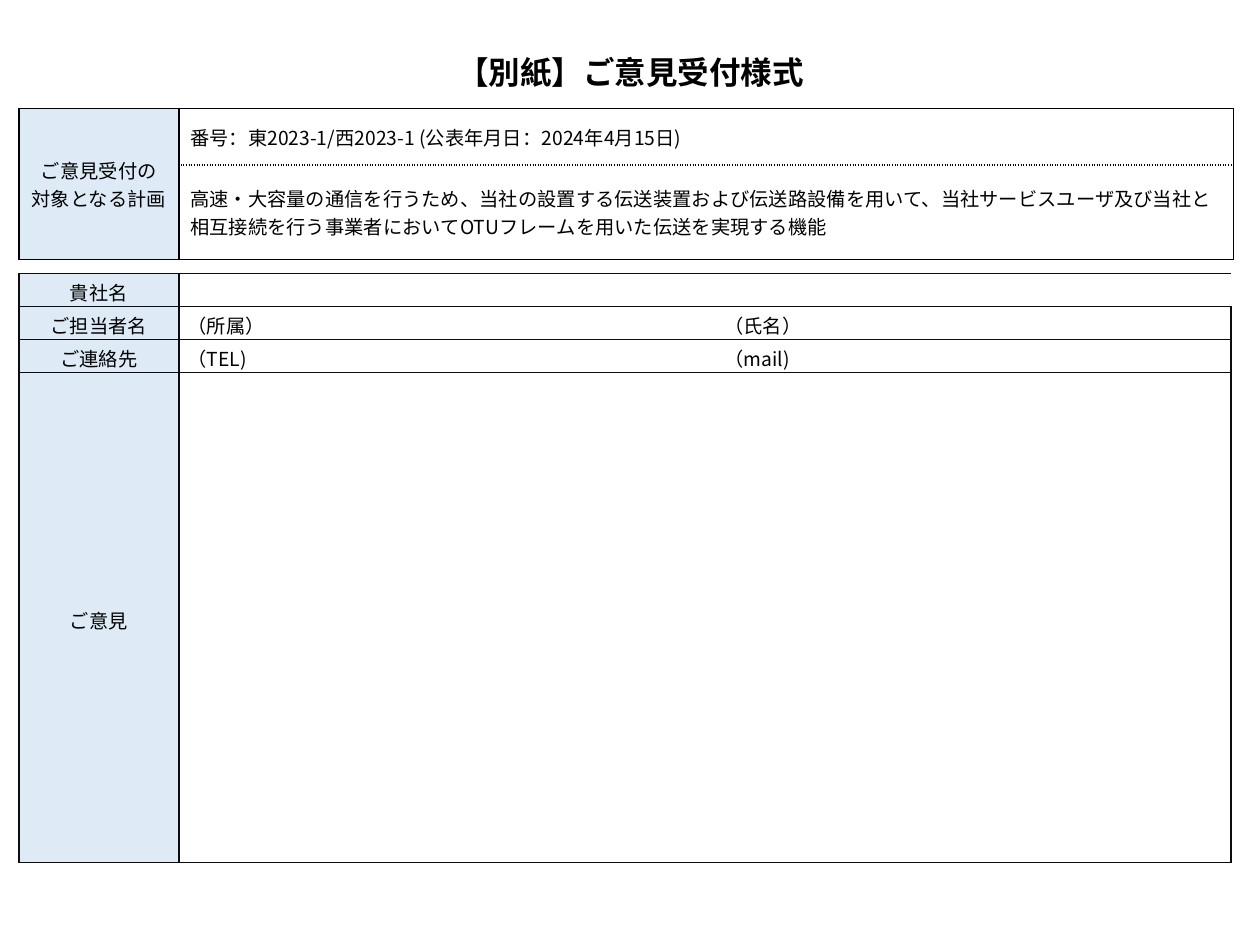
"""Build the opinion submission form slide."""
from lxml import etree
from pptx import Presentation
from pptx.dml.color import RGBColor
from pptx.enum.text import MSO_ANCHOR, PP_ALIGN
from pptx.oxml.ns import qn
from pptx.util import Inches, Pt

CENTER, LEFT = PP_ALIGN.CENTER, PP_ALIGN.LEFT
MIDDLE = MSO_ANCHOR.MIDDLE
TITLE_ONLY = 5
SIDES = ("L", "R", "T", "B")


def color(value):
    return RGBColor.from_string(value)


def write(frame, text, font="Noto Sans CJK JP", size=11, bold=False,
          ink="000000", align=LEFT):
    for index, line in enumerate(text.split("\n")):
        paragraph = frame.add_paragraph() if index else frame.paragraphs[0]
        paragraph.alignment = align
        if not line:
            etree.SubElement(paragraph._p, qn("a:endParaRPr"), sz=str(size * 100))
            continue
        run = paragraph.add_run()
        run.text = line
        run.font.size = Pt(size)
        run.font.bold = bold
        run.font.color.rgb = color(ink)
        run.font.name = font
        etree.SubElement(run.font._element, qn("a:ea"), typeface=font)


class FormSlide:
    """Hold the form style and the slide being filled."""

    label_fill = "DEEBF7"

    def __init__(self, presentation):
        layout = presentation.slide_layouts[TITLE_ONLY]
        self.slide = presentation.slides.add_slide(layout)

    def title(self, text, left, top, width, height):
        heading = self.slide.shapes.title
        heading.left, heading.top = Inches(left), Inches(top)
        heading.width, heading.height = Inches(width), Inches(height)
        heading.text_frame.vertical_anchor = MIDDLE
        write(heading.text_frame, text, size=18, bold=True, align=CENTER)

    def border(self, cell, side, ink, dash):
        line = etree.SubElement(cell._tc.get_or_add_tcPr(),
                                qn(f"a:ln{side}"), w=str(Pt(1)))
        if dash is None:
            etree.SubElement(line, qn("a:noFill"))
            return
        fill = etree.SubElement(line, qn("a:solidFill"))
        etree.SubElement(fill, qn("a:srgbClr"), val=ink)
        etree.SubElement(line, qn("a:prstDash"), val=dash)

    def table(self, rows, left, top, widths, heights, margins, ink, dashes, merge):
        grid = self.slide.shapes.add_table(
            len(heights), len(widths), Inches(left), Inches(top),
            Inches(sum(widths)), Inches(sum(heights))).table
        grid.first_row = grid.horz_banding = False
        for column, width in zip(grid.columns, widths):
            column.width = Inches(width)
        for row, height in zip(grid.rows, heights):
            row.height = Inches(height)
        first, last = merge
        grid.cell(*first).merge(grid.cell(*last))
        for r, texts in enumerate(rows):
            for c, text in enumerate(texts):
                cell = grid.cell(r, c)
                (cell.margin_left, cell.margin_top, cell.margin_right,
                 cell.margin_bottom) = map(Inches, margins)
                cell.vertical_anchor = MIDDLE
                for side in SIDES:
                    self.border(cell, side, ink, dashes.get((r, c, side), "solid"))
                if c == 0:
                    cell.fill.solid()
                    cell.fill.fore_color.rgb = color(self.label_fill)
                else:
                    cell.fill.background()
                write(cell.text_frame, text, align=LEFT if c else CENTER)


def main():
    presentation = Presentation()
    presentation.slide_width, presentation.slide_height = Inches(10), Inches(7.5)
    form = FormSlide(presentation)

    form.title("【別紙】ご意見受付様式", 0.85, 0.35, 8.31, 0.44)

    plan = [
        ("ご意見受付の\n対象となる計画",
         "番号：東2023-1/西2023-1 (公表年月日：2024年4月15日)"),
        ("", "高速・大容量の通信を行うため、当社の設置する伝送装置および伝送路設備を用いて、"
             "当社サービスユーザ及び当社と相互接続を行う事業者において"
             "OTUフレームを用いた伝送を実現する機能"),
    ]
    form.table(plan, 0.15, 0.86, [1.27, 8.37], [0.45, 0.75],
               (0.09, 0.05, 0.09, 0.05), "000000",
               {(0, 1, "B"): "sysDot", (1, 1, "T"): "sysDot"}, ((0, 0), (1, 0)))

    reply = [
        ("貴社名", "", ""),
        ("ご担当者名", "（所属）", "（氏名）"),
        ("ご連絡先", "（TEL)", "（mail)"),
        ("ご意見", "", ""),
    ]
    open_sides = {(r, c, side): None for r in range(len(reply))
                  for c, side in ((1, "R"), (2, "L"))}
    form.table(reply, 0.15, 2.17, [1.27, 4.26, 4.09], [0.26] * 3 + [3.89],
               (0.07, 0.04, 0.07, 0), "0D0D0D", open_sides, ((0, 1), (0, 2)))

    presentation.save("out.pptx")


if __name__ == "__main__":
    main()
